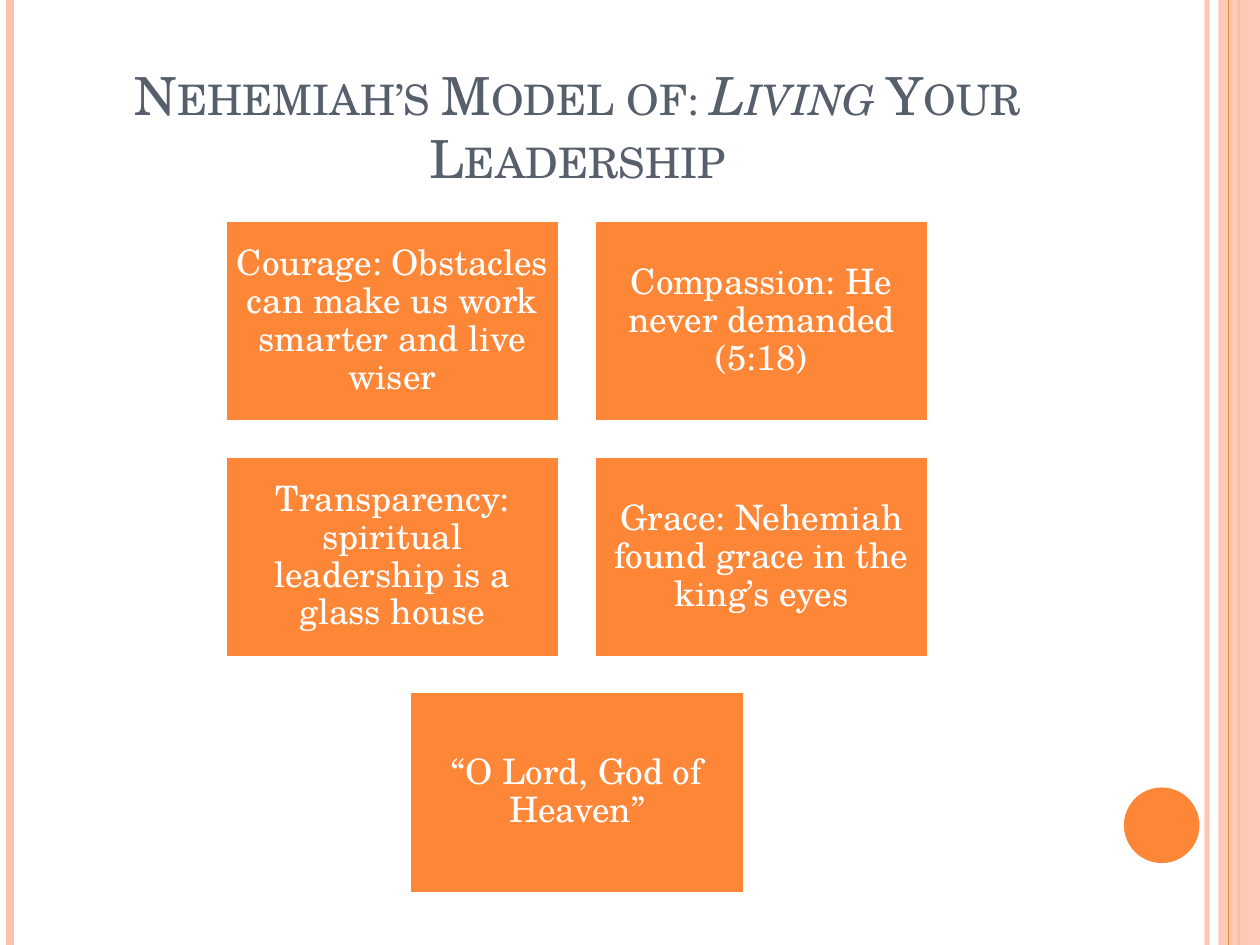
from lxml import etree
from pptx import Presentation
from pptx.dml.color import RGBColor
from pptx.enum.shapes import MSO_CONNECTOR, MSO_SHAPE
from pptx.enum.text import MSO_ANCHOR, PP_ALIGN
from pptx.oxml.ns import qn
from pptx.util import Inches, Pt

ORANGE = RGBColor(0xFE, 0x86, 0x37)
PEACH = RGBColor(0xFE, 0xC3, 0xAE)
SLATE = RGBColor(0x57, 0x5F, 0x6D)
WHITE = RGBColor(0xFF, 0xFF, 0xFF)
FONT = "TeX Gyre Schola"
STRAIGHT = MSO_CONNECTOR.STRAIGHT
RECTANGLE = MSO_SHAPE.RECTANGLE
OVAL = MSO_SHAPE.OVAL
CENTER = PP_ALIGN.CENTER
MIDDLE = MSO_ANCHOR.MIDDLE
BOTTOM = MSO_ANCHOR.BOTTOM

SLIDE_HEIGHT = 7.5
BOX_WIDTH, BOX_HEIGHT, GAP = 2.66, 1.6, 0.27
GRID_CENTER, GRID_TOP = 4.58, 1.75
TITLE = [("Nehemiah’s Model of: ", False), ("Living", True), (" Your Leadership", False)]
ROWS = [
    ["Courage: Obstacles can make us work smarter and live wiser",
     "Compassion: He never demanded (5:18)"],
    ["Transparency: spiritual leadership is a glass house",
     "Grace: Nehemiah found grace in the king’s eyes"],
    ["“O Lord, God of Heaven”"],
]


def set_opacity(fill, percent):
    color = fill._xPr.find(qn("a:solidFill"))[0]
    etree.SubElement(color, qn("a:alpha"), val=str(percent * 1000))


def add_stripe(slide, x, color, width, opacity=100):
    stripe = slide.shapes.add_connector(
        STRAIGHT, Inches(x), 0, Inches(x), Inches(SLIDE_HEIGHT))
    stripe.line.color.rgb = color
    stripe.line.width = Pt(width)
    if opacity < 100:
        set_opacity(stripe.line.fill, opacity)
    etree.SubElement(stripe._element.spPr, qn("a:effectLst"))


def add_block(shapes, kind, left, top, width, height, color):
    block = shapes.add_shape(
        kind, Inches(left), Inches(top), Inches(width), Inches(height))
    block.shadow.inherit = False
    block.fill.solid()
    block.fill.fore_color.rgb = color
    block.line.fill.background()
    return block


def add_span(para, text, size, color):
    span = para.add_run()
    span.text = text
    span.font.name = FONT
    span.font.size = Pt(size)
    span.font.color.rgb = color
    return span


def add_decoration(slide):
    add_stripe(slide, 9.58, PEACH, 3, 93)
    add_stripe(slide, 0.08, PEACH, 4.5)
    add_stripe(slide, 9.83, ORANGE, 1.5)
    band = add_block(slide.shapes, RECTANGLE, 9.67, 0, 0.33, SLIDE_HEIGHT, PEACH)
    set_opacity(band.fill, 87)
    add_stripe(slide, 9.75, ORANGE, 0.75)
    add_block(slide.shapes, OVAL, 8.92, 6.25, 0.6, 0.6, ORANGE)


def fill_title(slide):
    title = slide.shapes.title
    title.left, title.top = Inches(0.5), Inches(0.3)
    title.width, title.height = Inches(8.17), Inches(1.25)
    frame = title.text_frame
    frame.word_wrap = True
    frame.vertical_anchor = BOTTOM
    para = frame.paragraphs[0]
    para.alignment = CENTER
    for text, italic in TITLE:
        span = add_span(para, text, 30, SLATE)
        span.font.italic = italic
        span.font._element.set("cap", "small")


def add_text_box(shapes, left, top, text):
    box = add_block(shapes, RECTANGLE, left, top, BOX_WIDTH, BOX_HEIGHT, ORANGE)
    box.line.color.rgb = WHITE
    box.line.width = Pt(2)
    frame = box.text_frame
    frame.word_wrap = True
    frame.vertical_anchor = MIDDLE
    frame.margin_left = frame.margin_right = Inches(0.08)
    frame.margin_top = frame.margin_bottom = Inches(0.08)
    para = frame.paragraphs[0]
    para.alignment = CENTER
    para.line_spacing = 0.9
    add_span(para, text, 20, WHITE)


def add_box_grid(slide):
    group = slide.shapes.add_group_shape()
    for row, texts in enumerate(ROWS):
        row_width = len(texts) * (BOX_WIDTH + GAP) - GAP
        top = GRID_TOP + row * (BOX_HEIGHT + GAP)
        for column, text in enumerate(texts):
            left = GRID_CENTER - row_width / 2 + column * (BOX_WIDTH + GAP)
            add_text_box(group.shapes, left, top, text)


def main():
    deck = Presentation()
    deck.slide_width, deck.slide_height = Inches(10), Inches(SLIDE_HEIGHT)
    slide = deck.slides.add_slide(deck.slide_layouts[5])
    add_decoration(slide)
    fill_title(slide)
    add_box_grid(slide)
    deck.save("out.pptx")


if __name__ == "__main__":
    main()
